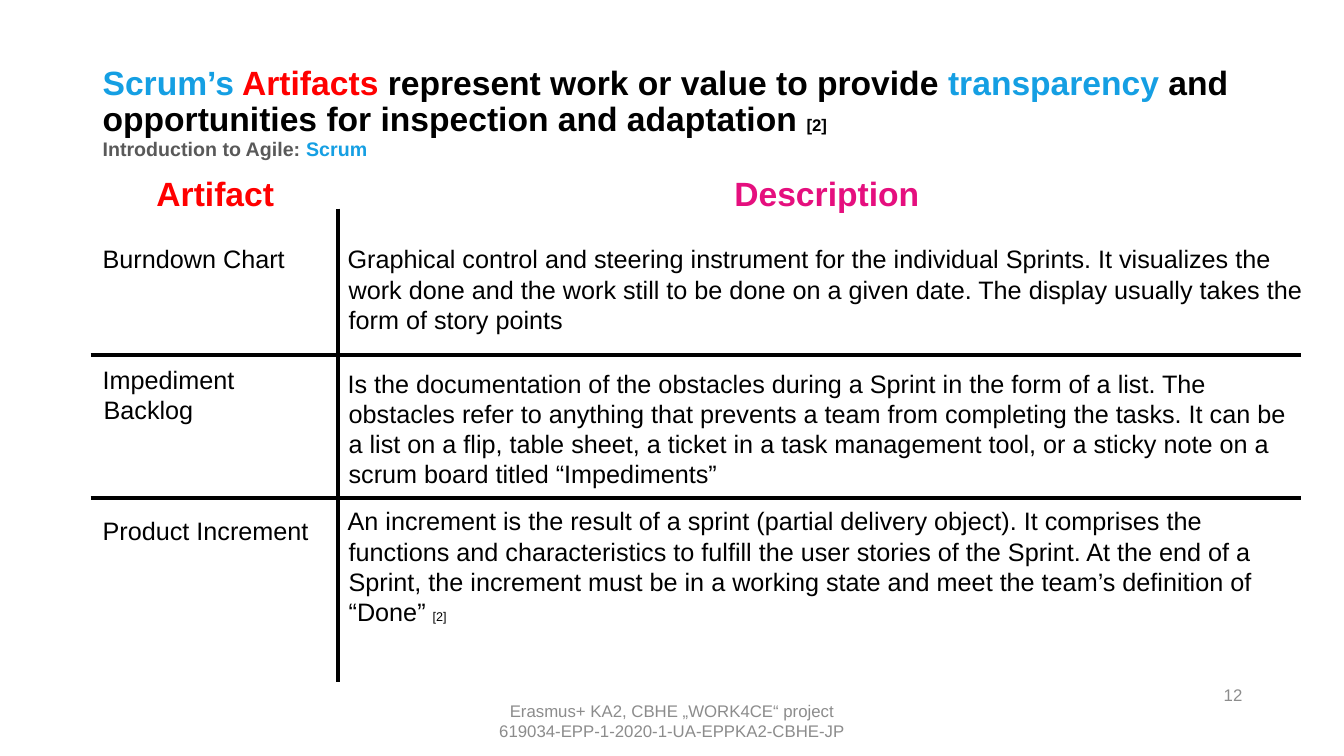
from dataclasses import dataclass

from lxml.etree import SubElement
from pptx import Presentation
from pptx.dml.color import RGBColor
from pptx.enum.shapes import MSO_CONNECTOR as Connector
from pptx.enum.text import MSO_ANCHOR as Anchor, PP_ALIGN as Align
from pptx.oxml.ns import qn
from pptx.util import Inches, Pt


@dataclass(frozen=True)
class Theme:
    font: str = "Arial"
    black: str = "000000"
    blue: str = "159FE3"
    red: str = "FF0000"
    pink: str = "E50F7E"
    dark_gray: str = "595959"
    gray: str = "8C8C8C"
    heading: int = 24
    body: int = 18
    subtitle: int = 14
    small: int = 12
    citation: int = 9
    rule: int = 3


theme = Theme()
deck = Presentation()
deck.slide_width, deck.slide_height = Inches(13.33), Inches(7.5)
page = deck.slides.add_slide(deck.slide_layouts[6])


def add_box(left, top, width, height, anchor=Anchor.TOP, wrap=True):
    box = page.shapes.add_textbox(Inches(left), Inches(top), Inches(width), Inches(height))
    frame = box.text_frame
    frame.word_wrap = wrap
    frame.vertical_anchor = anchor
    return frame


def add_span(para, text, size=theme.body, color=theme.black, bold=False):
    for number, line in enumerate(text.split("\n")):
        if number:
            para.add_line_break()
        if line:
            span = para.add_run()
            span.text = line
            span.font.name = theme.font
            span.font.size = Pt(size)
            span.font.bold = bold
            span.font.color.rgb = RGBColor.from_string(color)


# Footer
para = add_box(4.84, 6.9, 3.65, 0.5, wrap=False).paragraphs[0]
para.alignment = Align.CENTER
add_span(para, "Erasmus+ KA2, CBHE „WORK4CE“ project\n619034-EPP-1-2020-1-UA-EPPKA2-CBHE-JP",
         size=theme.small, color=theme.gray)

# Title and subtitle
para = add_box(0.92, 0.88, 11.5, 0.49, anchor=Anchor.MIDDLE).paragraphs[0]
para.line_spacing = 0.9
for text, size, color in [
    ("Scrum’s", theme.heading, theme.blue),
    (" Artifacts", theme.heading, theme.red),
    (" represent work or value to provide ", theme.heading, theme.black),
    ("transparency", theme.heading, theme.blue),
    (" and opportunities for inspection and adaptation ", theme.heading, theme.black),
    ("[2]\n", theme.small, theme.black),
    ("Introduction to Agile: ", theme.subtitle, theme.dark_gray),
    ("Scrum", theme.subtitle, theme.blue),
]:
    add_span(para, text, size=size, color=color, bold=True)

# Page number
para = add_box(11.47, 6.69, 0.95, 0.4, anchor=Anchor.MIDDLE).paragraphs[0]
para.alignment = Align.RIGHT
add_span(para, "12", size=theme.small, color=theme.gray)

# Columns: left, width, heading, heading colour, entries as (space before, text)
columns = [
    (3.35, 9.7, "Description", theme.pink, [
        (21.5, "Graphical control and steering instrument for the individual Sprints. "
               "It visualizes the work done and the work still to be done on a given date. "
               "The display usually takes the form of story points"),
        (24, "Is the documentation of the obstacles during a Sprint in the form of a list. "
             "The obstacles refer to anything that prevents a team from completing the tasks. "
             "It can be a list on a flip, table sheet, a ticket in a task management tool, "
             "or a sticky note on a scrum board titled “Impediments”"),
        (12, "An increment is the result of a sprint (partial delivery object). "
             "It comprises the functions and characteristics to fulfill the user stories "
             "of the Sprint. At the end of a Sprint, the increment must be in a working "
             "state and meet the team’s definition of “Done” "),
    ]),
    (0.92, 2.43, "Artifact", theme.red, [
        (21.5, "Burndown Chart"),
        (64.5, "Impediment Backlog"),
        (64.5, "Product Increment"),
    ]),
]
for left, width, heading, color, entries in columns:
    frame = add_box(left, 1.67, width, 5.22)
    para = frame.paragraphs[0]
    para.alignment = Align.CENTER
    add_span(para, heading, size=theme.heading, color=color, bold=True)
    for gap, text in entries:
        para = frame.add_paragraph()
        para.space_before = Pt(gap)
        add_span(para, text)
    if heading == "Description":
        add_span(para, "[2]", size=theme.citation)
    for para in frame.paragraphs:
        properties = para._p.get_or_add_pPr()
        properties.set("marL", str(Inches(0.01)))
        properties.set("indent", str(-Inches(0.01)))

# Grid lines
for ends in [(3.35, 2.07, 3.35, 6.77), (0.9, 3.52, 12.9, 3.52), (0.9, 4.94, 12.9, 4.94)]:
    rule = page.shapes.add_connector(Connector.STRAIGHT, *map(Inches, ends))
    rule.line.color.rgb = RGBColor.from_string(theme.black)
    rule.line.width = Pt(theme.rule)
    SubElement(rule._element.spPr, qn("a:effectLst"))

deck.save("out.pptx")
